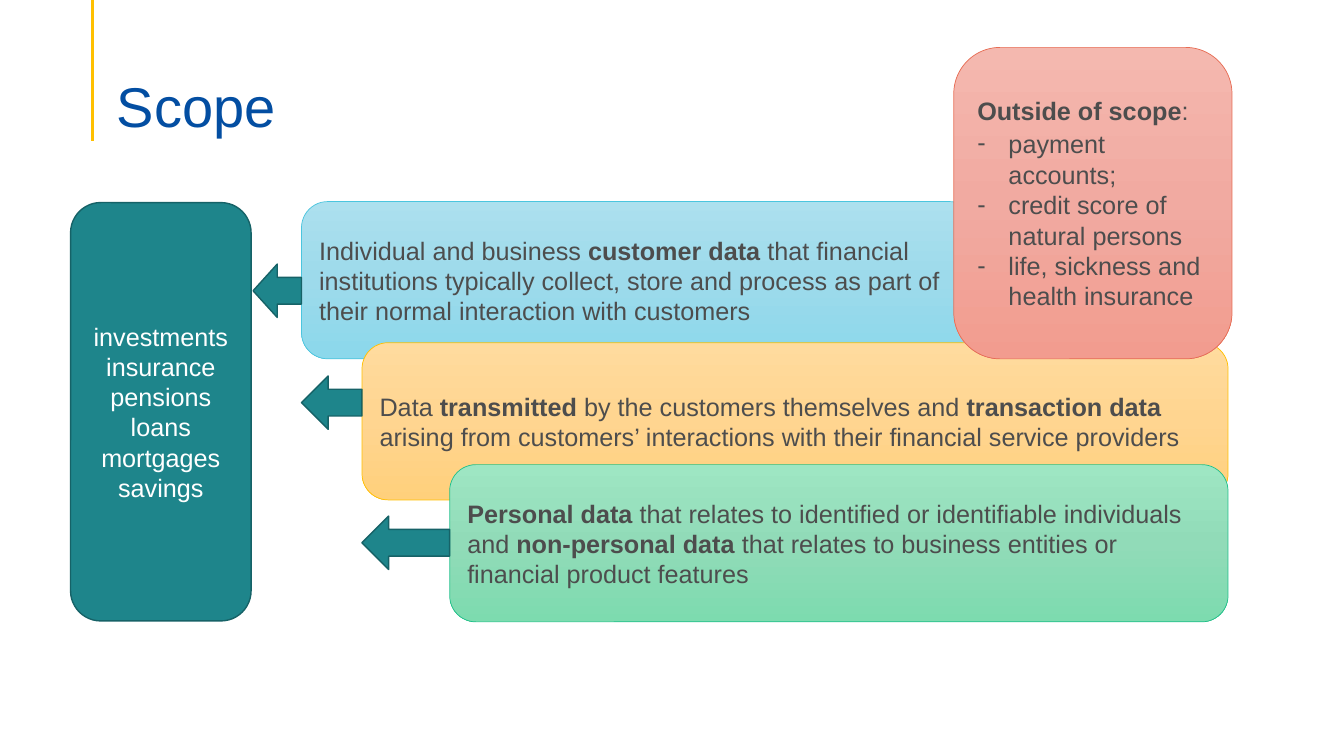
from copy import deepcopy
from pptx import Presentation
from pptx.dml.color import RGBColor
from pptx.enum.shapes import MSO_CONNECTOR, MSO_SHAPE as Shape
from pptx.enum.text import MSO_ANCHOR as Anchor, PP_ALIGN as Align
from pptx.oxml.ns import qn
from pptx.util import Inches, Pt
from lxml import etree

WHITE = RGBColor(0xFF, 0xFF, 0xFF)
GREY = RGBColor(0x4D, 0x4D, 0x4D)
BLUE = RGBColor(0x03, 0x4E, 0xA2)
GOLD = RGBColor(0xFF, 0xC0, 0x00)
TEAL = RGBColor(0x1E, 0x85, 0x8B)
DARK = RGBColor(0x16, 0x62, 0x67)
CYAN = RGBColor(0x4B, 0xC5, 0xDE)
GREEN = RGBColor(0x1E, 0xC0, 0x8A)
RED = RGBColor(0xE7, 0x6C, 0x53)

# A run is (text, bold) or (text, bold, size)
TITLE = "Scope"
PRODUCTS = "investments insurance pensions loans mortgages savings"
# left, top, right, arrow top, shades, outline, runs
LAYERS = [
    (2.99, 2.0, 9.68, 2.62, ("ACE0EE", "9DDAEB", "8BD8EB"), CYAN, [
        ("Individual and business", False), (" customer data ", True),
        ("that financial institutions typically collect, store and process "
         "as part of their normal interaction with customers", False)]),
    (3.59, 3.4, 12.18, 3.73, ("FFDB9E", "FFD590", "FFD07C"), GOLD, [
        ("Data ", False), ("transmitted", True),
        (" by the customers themselves and ", False),
        ("transaction data ", True),
        ("arising from customers’ interactions with their financial "
         "service providers", False)]),
    (4.46, 4.61, 12.18, 5.12, ("9EE6C3", "91DBB8", "7DDBAF"), GREEN, [
        ("Personal data ", True),
        ("that relates to identified or identifiable individuals and ", False),
        ("non-personal data", True),
        (" that relates to business entities or financial product features",
         False)]),
]
OUT_SHADES = ("F4B8AF", "F1AAA1", "F29C8F")
OUT_HEAD = [("Outside of scope", True), (":", False)]
OUT_ITEMS = [
    [("payment", False), (" ", False, 20), ("accounts;", False)],
    [("credit score of natural persons", False)],
    [("life, sickness and health insurance", False)],
]
LAYER_H, ARROW_H, ARROW_X = 1.56, 0.53, 2.51


def add_runs(para, runs, color=GREY, size=18):
    for text, bold, *own in runs:
        run = para.add_run()
        run.text = text
        font = run.font
        font.name, font.bold = "Arial", bold
        font.size = Pt(own[0] if own else size)
        font.color.rgb = color


def add_dash(para):
    """Give the paragraph a hanging dash bullet."""
    props = para._p.get_or_add_pPr()
    props.set("marL", str(Inches(0.31)))
    props.set("indent", str(-Inches(0.31)))
    etree.SubElement(props, qn("a:buFont")).set("typeface", "Arial")
    etree.SubElement(props, qn("a:buChar")).set("char", "-")


def shade(shape, colors):
    """Fill from top to bottom with evenly spaced colours."""
    fill = shape.fill
    fill.gradient()
    fill.gradient_angle = 270
    stops = shape._element.spPr.find(".//" + qn("a:gsLst"))
    stops.insert(1, deepcopy(stops[0]))
    for i, (stop, color) in enumerate(zip(fill.gradient_stops, colors)):
        stop.position = i / (len(colors) - 1)
        stop.color.rgb = RGBColor.from_string(color)


def add_box(slide, kind, box, line, width):
    shape = slide.shapes.add_shape(kind, *map(Inches, box))
    shape.shadow.inherit = False
    shape.line.color.rgb = line
    shape.line.width = Pt(width)
    frame = shape.text_frame
    frame.word_wrap = True
    frame.vertical_anchor = Anchor.MIDDLE
    frame.paragraphs[0].alignment = Align.LEFT
    return shape


def add_teal(slide, kind, box):
    shape = add_box(slide, kind, box, DARK, 1)
    shape.fill.solid()
    shape.fill.fore_color.rgb = TEAL
    return shape


def add_title(slide):
    rule = slide.shapes.add_connector(
        MSO_CONNECTOR.STRAIGHT, Inches(0.92), 0, Inches(0.92), Inches(1.4))
    rule.line.color.rgb = GOLD
    rule.line.width = Pt(2.25)
    etree.SubElement(rule._element.spPr, qn("a:effectLst"))
    box = slide.shapes.add_textbox(*map(Inches, (1.06, 0.53, 11.5, 0.86)))
    frame = box.text_frame
    frame.word_wrap = True
    frame.vertical_anchor = Anchor.BOTTOM
    frame.margin_bottom = 0
    para = frame.paragraphs[0]
    para.line_spacing = 0.9
    add_runs(para, [(TITLE, False)], BLUE, 40)


def add_layers(slide):
    for left, top, right, _, shades, line, runs in LAYERS:
        box = add_box(slide, Shape.ROUNDED_RECTANGLE,
                      (left, top, right - left, LAYER_H), line, 0.5)
        shade(box, shades)
        add_runs(box.text_frame.paragraphs[0], runs)


def add_products(slide):
    box = add_teal(slide, Shape.ROUNDED_RECTANGLE, (0.7, 2.01, 1.79, 4.15))
    para = box.text_frame.paragraphs[0]
    para.alignment = Align.CENTER
    add_runs(para, [(PRODUCTS, False)], WHITE)


def add_outside(slide):
    box = add_box(slide, Shape.ROUNDED_RECTANGLE,
                  (9.46, 0.47, 2.76, 3.09), RED, 0.5)
    shade(box, OUT_SHADES)
    frame = box.text_frame
    add_runs(frame.paragraphs[0], OUT_HEAD)
    for item in OUT_ITEMS:
        para = frame.add_paragraph()
        para.alignment = Align.LEFT
        add_dash(para)
        add_runs(para, item)


def add_arrows(slide):
    """Point from each layer back to the left edge of the one before."""
    start = ARROW_X
    for left, _, _, top, *_ in LAYERS:
        add_teal(slide, Shape.LEFT_ARROW, (start, top, left - start, ARROW_H))
        start = left


def main():
    deck = Presentation()
    deck.slide_width, deck.slide_height = Inches(13.33), Inches(7.5)
    slide = deck.slides.add_slide(deck.slide_layouts[6])
    add_title(slide)
    add_layers(slide)
    add_products(slide)
    add_outside(slide)
    add_arrows(slide)
    deck.save("out.pptx")


if __name__ == "__main__":
    main()
